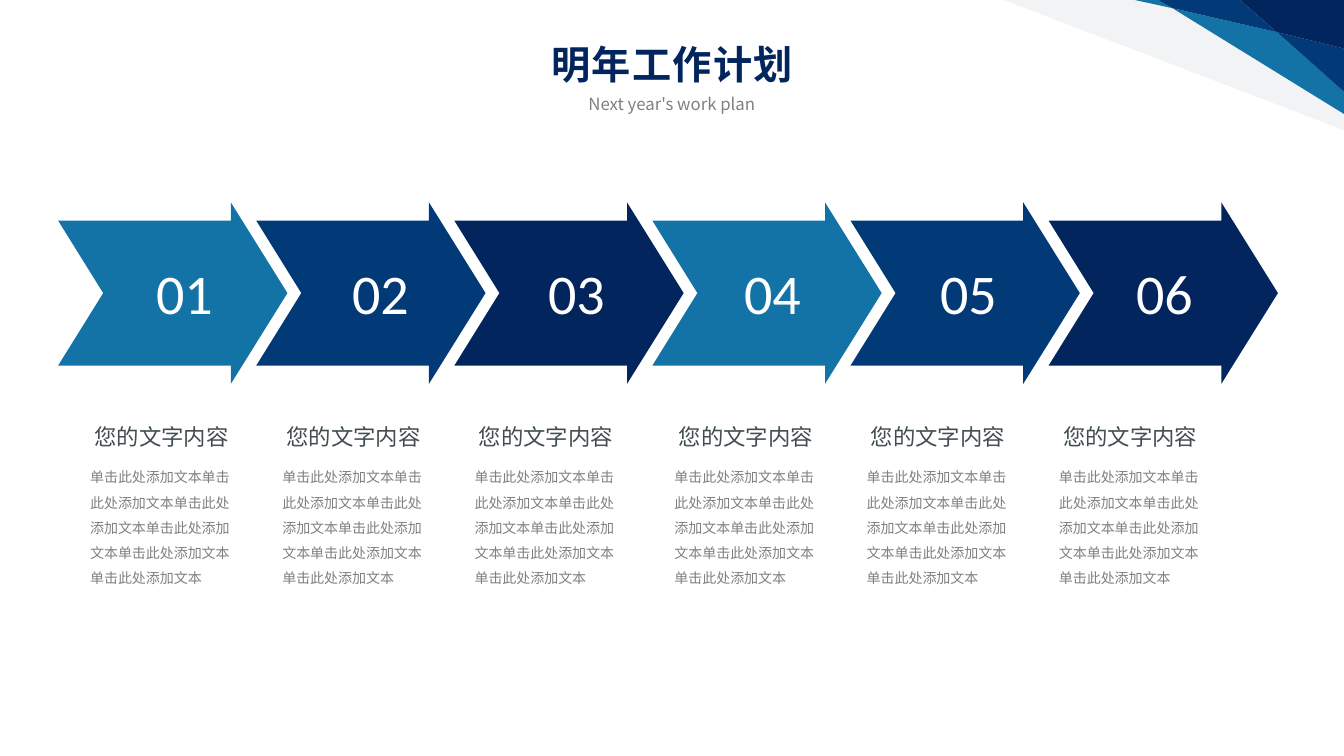
"""Build the six-step work plan slide for next year."""
import dataclasses

import pptx
import pptx.dml.color
import pptx.enum.text
import pptx.oxml
import pptx.oxml.ns
import pptx.util


@dataclasses.dataclass(frozen=True)
class Theme:
    font: str = "Noto Sans CJK SC"
    number_font: str = "Calibri"
    sky: str = "1372A6"
    blue: str = "023977"
    navy: str = "03255D"
    mist: str = "F1F3F4"
    white: str = "FFFFFF"
    slate: str = "434D51"
    grey: str = "808080"
    title_size: int = 28
    number_size: int = 40
    heading_size: int = 16
    subtitle_size: int = 12
    body_size: int = 10


class PlanSlide:
    def __init__(self, deck, theme):
        self.theme = theme
        self.slide = deck.slides.add_slide(deck.slide_layouts[5])

    def polygon(self, points, color):
        corners = [(pptx.util.Pt(x), pptx.util.Pt(y)) for x, y in points]
        builder = self.slide.shapes.build_freeform(*corners[0])
        builder.add_line_segments(corners[1:], close=True)
        outline = builder.convert_to_shape()
        outline.shadow.inherit = False
        outline.fill.solid()
        outline.fill.fore_color.rgb = pptx.dml.color.RGBColor.from_string(color)
        outline.line.fill.background()

    def typeset(self, holder, text, size, color, font=None, centered=False, grow=True):
        frame = holder.text_frame
        frame.word_wrap = True
        frame.vertical_anchor = pptx.enum.text.MSO_ANCHOR.TOP
        fit = pptx.enum.text.MSO_AUTO_SIZE
        frame.auto_size = fit.SHAPE_TO_FIT_TEXT if grow else fit.NONE
        paragraph = frame.paragraphs[0]
        paragraph.text = text
        align = pptx.enum.text.PP_ALIGN
        paragraph.alignment = align.CENTER if centered else align.LEFT
        paragraph.font.size = pptx.util.Pt(size)
        paragraph.font.color.rgb = pptx.dml.color.RGBColor.from_string(color)
        paragraph.font.name = font or self.theme.font
        qn = pptx.oxml.ns.qn
        defaults = paragraph._p.find(".//" + qn("a:defRPr"))
        east_asian = pptx.oxml.parse_xml(f"<a:ea {pptx.oxml.ns.nsdecls('a')}/>")
        east_asian.set("typeface", paragraph.font.name)
        defaults.find(qn("a:latin")).addnext(east_asian)
        return paragraph

    def text(self, box, *args, **style):
        holder = self.slide.shapes.add_textbox(*map(pptx.util.Pt, box))
        return self.typeset(holder, *args, **style)

    def title(self, box, text):
        holder = self.slide.shapes.title
        holder.left, holder.top, holder.width, holder.height = map(pptx.util.Pt, box)
        heading = self.typeset(holder, text, self.theme.title_size, self.theme.navy, centered=True)
        heading.font.bold = True
        heading.font._element.set("spc", "100")

    def arrow(self, left, top, color):
        outline = [(123.4, 0), (163.8, 64.8), (123.4, 129.6), (123.4, 116.6),
                   (0, 116.6), (32.2, 64.8), (0, 13), (123.4, 13)]
        self.polygon([(left + x, top + y) for x, y in outline], color)

    def step(self, index):
        theme = self.theme
        color = (theme.sky, theme.blue, theme.navy)[index % 3]
        self.arrow(41.5 + 141.5 * index, 144.6, color)
        self.text((104.4 + 140 * index, 181.4, 67, 55.7), f"{index + 1:02}",
                  theme.number_size, theme.white, font=theme.number_font)
        column = 57.3 + 137.3 * index + 5.5 * (index // 3)
        self.text((column + 3.1, 298.8, 110.2, 26.7), "您的文字内容",
                  theme.heading_size, theme.slate)
        body = self.text((column, 325.4, 116.6, 95.8), "单击此处添加文本" * 6,
                         theme.body_size, theme.grey, grow=False)
        body.line_spacing = 1.5
        body.space_before = pptx.util.Pt(13.3)

    def corner(self):
        theme = self.theme
        notch, crossing = (837.4, 5.8), (912.2, 23)
        fold, edge, lower = (885.6, 0), (960, 34.6), (960, 65.5)
        self.polygon([(717.1, 0), (960, 92.9), (960, 0)], theme.mist)
        self.polygon([(810.7, 0), notch, (827.3, 0)], theme.sky)
        self.polygon([notch, (960, 81.4), lower, crossing], theme.sky)
        self.polygon([crossing, lower, edge], theme.blue)
        self.polygon([fold, crossing, edge, (960, 0)], theme.navy)
        self.polygon([(827.3, 0), notch, crossing, fold], theme.blue)


def main():
    deck = pptx.Presentation()
    deck.slide_width, deck.slide_height = pptx.util.Pt(960), pptx.util.Pt(540)
    theme = Theme()
    plan = PlanSlide(deck, theme)
    plan.corner()
    plan.title((0, 25.2, 960, 41), "明年工作计划")
    plan.text((362.6, 63.4, 234.7, 21.6), "Next year's work plan",
              theme.subtitle_size, theme.grey, centered=True)
    for index in range(6):
        plan.step(index)
    deck.save("out.pptx")


if __name__ == "__main__":
    main()
